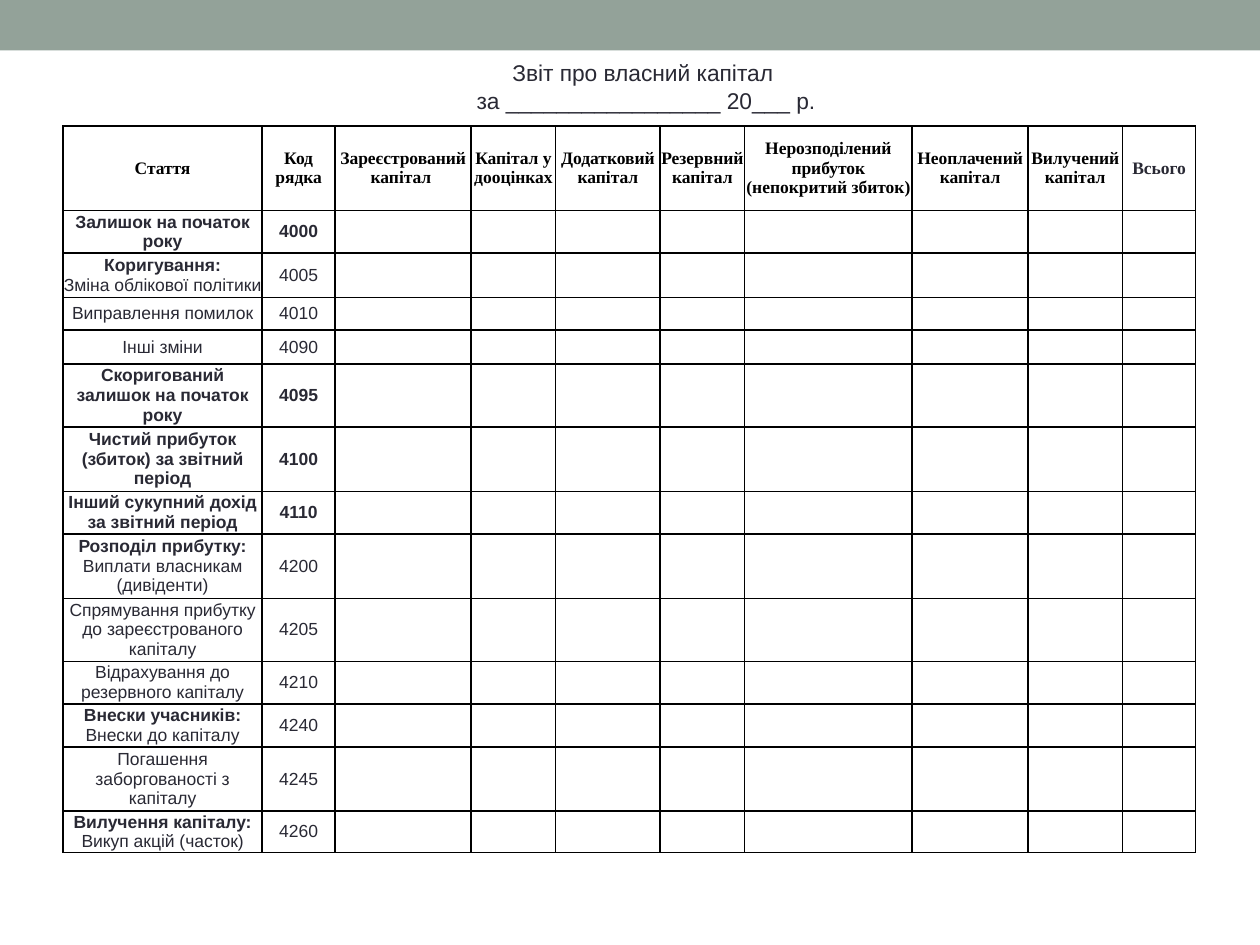
"""Build a slide with the blank form of a statement of changes in equity."""
from lxml import etree
from pptx import Presentation
from pptx.dml.color import RGBColor
from pptx.enum.shapes import MSO_SHAPE
from pptx.enum.text import MSO_ANCHOR, MSO_AUTO_SIZE, PP_ALIGN
from pptx.oxml.ns import qn
from pptx.util import Inches, Pt

RECTANGLE = MSO_SHAPE.RECTANGLE
MIDDLE = MSO_ANCHOR.MIDDLE
CENTER = PP_ALIGN.CENTER
NO_AUTOFIT = MSO_AUTO_SIZE.NONE
SAGE = RGBColor(0x93, 0xA2, 0x99)
INK = RGBColor(0x29, 0x29, 0x34)
BLACK = RGBColor(0, 0, 0)

COLUMNS = [
    ("Стаття", 1.58),
    ("Код рядка", 0.58),
    ("Зареєстрований капітал ", 1.08),
    ("Капітал у дооцінках", 0.67),
    ("Додатковий капітал", 0.83),
    ("Резервний капітал", 0.67),
    ("Нерозподілений прибуток (непокритий збиток)", 1.33),
    ("Неоплачений капітал", 0.92),
    ("Вилучений капітал", 0.75),
    ("Всього", 0.58),
]
HEADER_HEIGHT = 0.67
ARTICLES = [
    ("4000", "Залишок на початок року", "", 0.34),
    ("4005", "Коригування:", "Зміна облікової політики", 0.35),
    ("4010", "", "Виправлення помилок", 0.26),
    ("4090", "", "Інші зміни", 0.27),
    ("4095", "Скоригований залишок на початок року", "", 0.5),
    ("4100", "Чистий прибуток (збиток) за звітний період", "", 0.51),
    ("4110", "Інший сукупний дохід за звітний період", "", 0.34),
    ("4200", "Розподіл прибутку:", "Виплати власникам (дивіденти)", 0.51),
    ("4205", "", "Спрямування прибутку до зареєстрованого капіталу", 0.5),
    ("4210", "", "Відрахування до резервного капіталу", 0.34),
    ("4240", "Внески учасників:", "Внески до капіталу", 0.34),
    ("4245", "", "Погашення заборгованості з капіталу", 0.51),
    ("4260", "Вилучення капіталу:", "Викуп акцій (часток)", 0.33),
]


def write_lines(frame, lines, size, font_name, color):
    frame.text = "\n".join(text for text, bold in lines)
    for paragraph, (text, bold) in zip(frame.paragraphs, lines):
        paragraph.alignment = CENTER
        for run in paragraph.runs:
            run.font.size = Pt(size)
            run.font.name = font_name
            run.font.bold = bold
            run.font.color.rgb = color


def format_cell(cell):
    cell.margin_left = cell.margin_right = cell.margin_top = cell.margin_bottom = 0
    cell.vertical_anchor = MIDDLE
    properties = cell._tc.get_or_add_tcPr()
    for side in ("a:lnL", "a:lnR", "a:lnT", "a:lnB"):
        border = etree.SubElement(properties, qn(side), w=str(Pt(1)))
        fill = etree.SubElement(border, qn("a:solidFill"))
        etree.SubElement(fill, qn("a:srgbClr"), val=str(BLACK))
    cell.fill.background()


prs = Presentation()
prs.slide_width, prs.slide_height = Inches(10), Inches(7.5)
slide = prs.slides.add_slide(prs.slide_layouts[5])

top_band = slide.shapes.add_shape(RECTANGLE, 0, 0, prs.slide_width, Inches(0.4))
top_band.shadow.inherit = False
top_band.fill.solid()
top_band.fill.fore_color.rgb = SAGE
top_band.line.fill.background()

heading = slide.shapes.title
heading.left, heading.top = Inches(0.75), Inches(0.42)
heading.width, heading.height = Inches(8.75), Inches(0.53)
heading.text_frame.word_wrap = True
heading.text_frame.auto_size = NO_AUTOFIT
heading_lines = [("Звіт про власний капітал ", False), ("за _________________ 20___ р.", False)]
write_lines(heading.text_frame, heading_lines, 13, "Arial", INK)

report = slide.shapes.add_table(
    len(ARTICLES) + 1, len(COLUMNS), Inches(0.5), Inches(1), Inches(9), Inches(5.76)
).table
report.first_row = report.horz_banding = False
for cell in report.iter_cells():
    format_cell(cell)

report.rows[0].height = Inches(HEADER_HEIGHT)
for index, (label, width) in enumerate(COLUMNS):
    report.columns[index].width = Inches(width)
    label_color = INK if label == "Всього" else BLACK
    write_lines(report.cell(0, index).text_frame, [(label, True)], 10, "Times New Roman", label_color)

for row, (code, group, detail, height) in enumerate(ARTICLES, start=1):
    report.rows[row].height = Inches(height)
    article_lines = [(text, bold) for text, bold in ((group, True), (detail, False)) if text]
    write_lines(report.cell(row, 0).text_frame, article_lines, 10, "Arial", INK)
    write_lines(report.cell(row, 1).text_frame, [(code, not detail)], 10, "Arial", INK)
    for column in range(2, len(COLUMNS)):
        blank = report.cell(row, column).text_frame.paragraphs[0]
        etree.SubElement(blank._p, qn("a:endParaRPr"), sz="1000")

prs.save("out.pptx")
